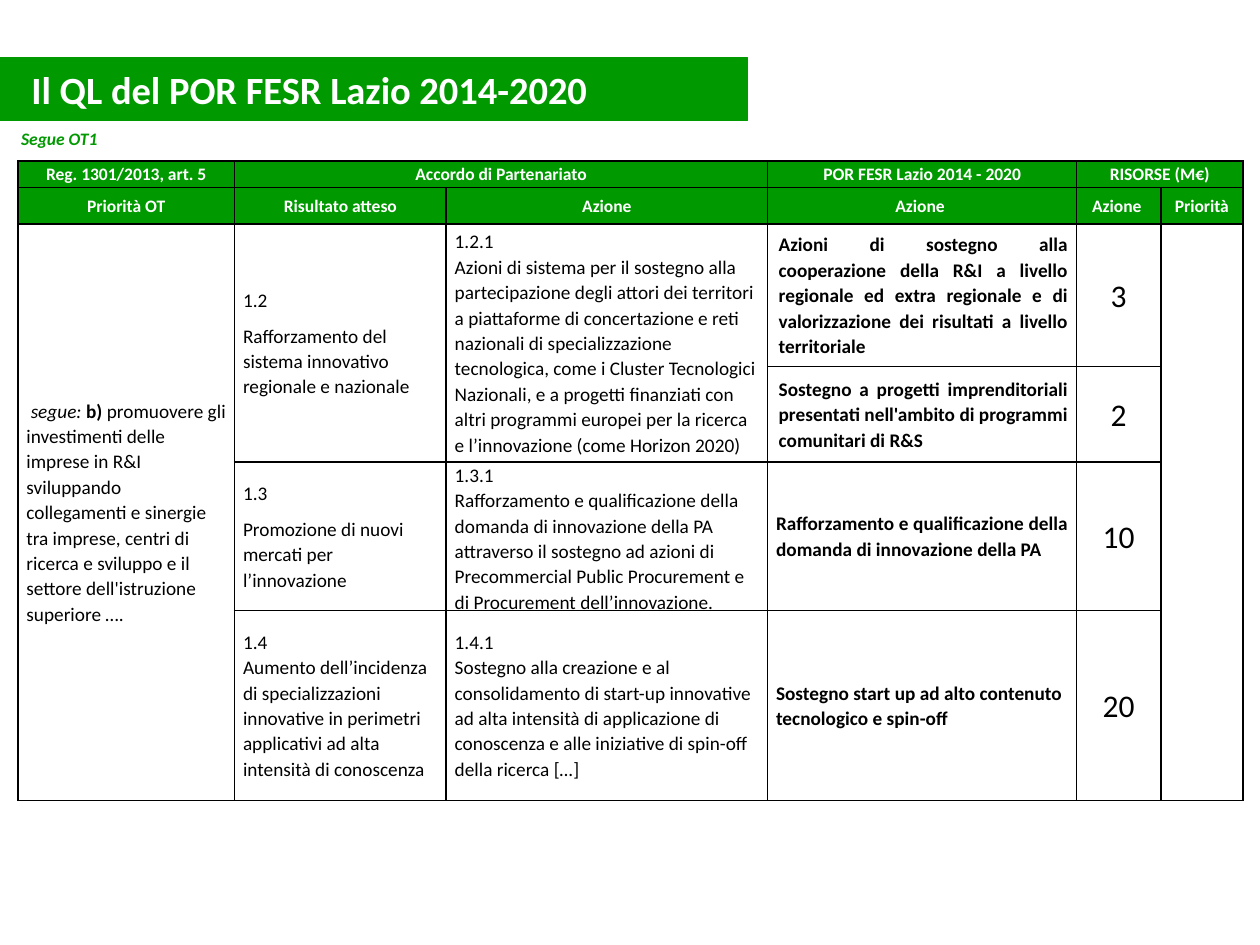
import pptx
import pptx.dml.color
import pptx.enum.shapes
import pptx.enum.text
import pptx.util
import lxml.etree

Pt = pptx.util.Pt
ALIGN = pptx.enum.text.PP_ALIGN
MIDDLE = pptx.enum.text.MSO_ANCHOR.MIDDLE
COLORS = {"green": "009900", "white": "FFFFFF", "black": "000000"}


def add_span(para, text, size, color, style=""):
    """Add one run; style holds "b" for bold and "i" for italic."""
    span = para.add_run()
    span.text = text
    span.font.name = "Calibri"
    span.font.size = Pt(size)
    span.font.bold = "b" in style
    span.font.italic = "i" in style
    span.font.color.rgb = pptx.dml.color.RGBColor.from_string(COLORS[color])


def add_borders(cell):
    """Draw a thin black line on every side of a cell, below its fill in the schema order."""
    properties = cell._tc.get_or_add_tcPr()
    space = "http://schemas.openxmlformats.org/drawingml/2006/main"
    for place, side in enumerate(("lnL", "lnR", "lnT", "lnB")):
        line = lxml.etree.Element(f"{{{space}}}{side}", w=str(Pt(1)))
        fill = lxml.etree.SubElement(line, f"{{{space}}}solidFill")
        lxml.etree.SubElement(fill, f"{{{space}}}srgbClr", val=COLORS["black"])
        properties.insert(place, line)


deck = pptx.Presentation()
deck.slide_width, deck.slide_height = Pt(720), Pt(540)
page = deck.slides.add_slide(deck.slide_layouts[6])

# Subtitle
box = page.shapes.add_textbox(Pt(5), Pt(54.7), Pt(452), Pt(49))
box.text_frame.word_wrap = True
box.text_frame.vertical_anchor = MIDDLE
add_span(box.text_frame.paragraphs[0], "Segue OT1", 10, "green", "bi")

# Table grid
widths = [123.8, 121, 183.6, 176.6, 48.2, 46.8]
heights = [15.1, 20.9, 81.4, 54.7, 81.4, 108.7]
table = page.shapes.add_table(
    len(heights), len(widths), Pt(10.2), Pt(92), Pt(sum(widths)), Pt(sum(heights))
).table
for column, width in zip(table.columns, widths):
    column.width = Pt(width)
for row, height in zip(table.rows, heights):
    row.height = Pt(height)

for row_index, row in enumerate(table.rows):
    for cell in row.cells:
        cell.margin_left = cell.margin_right = Pt(4.9)
        cell.margin_top = cell.margin_bottom = 0
        cell.vertical_anchor = MIDDLE
        cell.fill.solid()
        shade = COLORS["green" if row_index < 2 else "white"]
        cell.fill.fore_color.rgb = pptx.dml.color.RGBColor.from_string(shade)
        add_borders(cell)

# Merged cells: first row, first column, last row, last column
for top, left, bottom, right in [
    (0, 1, 0, 2), (0, 4, 0, 5), (2, 0, 5, 0), (2, 1, 3, 1), (2, 2, 3, 2), (2, 5, 5, 5),
]:
    table.cell(top, left).merge(table.cell(bottom, right))

# Header cells
headers = {
    (0, 0): "Reg. 1301/2013, art. 5",
    (0, 1): "Accordo di Partenariato",
    (0, 3): "POR FESR Lazio 2014 - 2020",
    (0, 4): "RISORSE (M€)",
    (1, 0): "Priorità OT",
    (1, 1): "Risultato atteso",
    (1, 2): "Azione",
    (1, 3): "Azione ",
    (1, 4): "Azione ",
    (1, 5): "Priorità",
}
# Each entry: row, column, alignment, size, colour, paragraphs of (text, style) runs
entries = [
    (row, column, ALIGN.CENTER, 10, "white", [[(text, "b")]])
    for (row, column), text in headers.items()
]

# Priority
entries.append((2, 0, ALIGN.LEFT, 11, "black", [[
    (" ", "b"),
    ("segue: ", "i"),
    ("b)", "b"),
    (" promuovere gli investimenti delle imprese in R&I sviluppando collegamenti e sinergie "
     "tra imprese, centri di ricerca e sviluppo e il settore dell'istruzione superiore ….", ""),
]]))

# Expected results and partnership actions: a code, then its description
numbered = [
    (2, 1, "1.2", [("Rafforzamento del sistema innovativo regionale e nazionale", "")]),
    (2, 2, "1.2.1", [(
        "Azioni di sistema per il sostegno alla partecipazione degli attori dei territori a "
        "piattaforme di concertazione e reti nazionali di specializzazione tecnologica, come i "
        "Cluster Tecnologici Nazionali, e a progetti finanziati con altri programmi europei per "
        "la ricerca e l’innovazione (come Horizon 2020)", "")]),
    (4, 1, "1.3", [("Promozione di nuovi mercati per l’innovazione", "")]),
    (4, 2, "1.3.1", [(
        "Rafforzamento e qualificazione della domanda di innovazione della PA attraverso il "
        "sostegno ad azioni di Precommercial Public Procurement e di Procurement "
        "dell’innovazione.", "")]),
    (5, 1, "1.4", [(
        "Aumento dell’incidenza di specializzazioni innovative in perimetri applicativi ad alta "
        "intensità di conoscenza", "")]),
    (5, 2, "1.4.1", [
        ("Sostegno alla creazione e al consolidamento di start-up innovative ad alta intensità "
         "di applicazione di conoscenza e alle iniziative di spin-off della ricerca [", ""),
        ("…", "i"),
        ("]", "")]),
]
for row, column, code, description in numbered:
    entries.append((row, column, ALIGN.LEFT, 11, "black", [[(code, "")], description]))

# Regional actions and their resources
actions = [
    (2, ALIGN.JUSTIFY, "3",
     "Azioni di sostegno alla cooperazione della R&I a livello regionale ed extra regionale e "
     "di valorizzazione dei risultati a livello territoriale"),
    (3, ALIGN.JUSTIFY, "2",
     "Sostegno a progetti imprenditoriali presentati nell'ambito di programmi comunitari di R&S"),
    (4, ALIGN.JUSTIFY, "10",
     "Rafforzamento e qualificazione della domanda di innovazione della PA "),
    (5, ALIGN.LEFT, "20",
     "Sostegno start up ad alto contenuto tecnologico e spin-off"),
]
for row, alignment, amount, action in actions:
    entries.append((row, 3, alignment, 11, "black", [[(action, "b")]]))
    entries.append((row, 4, ALIGN.CENTER, 18, "black", [[(amount, "")]]))

# Fill the cells
for row, column, alignment, size, color, paragraphs in entries:
    frame = table.cell(row, column).text_frame
    for index, spans in enumerate(paragraphs):
        para = frame.add_paragraph() if index else frame.paragraphs[0]
        para.alignment = alignment
        para.line_spacing = 1.07
        for text, style in spans:
            add_span(para, text, size, color, style)

# Gap below two of the codes, slight indent of two actions
for row in (2, 4):
    table.cell(row, 1).text_frame.paragraphs[0].space_after = Pt(6)
for row in (2, 3):
    table.cell(row, 3).margin_left = Pt(6.4)

# Title band
band = page.shapes.add_shape(
    pptx.enum.shapes.MSO_SHAPE.RECTANGLE, 0, Pt(33), Pt(427), Pt(36)
)
band.shadow.inherit = False
band.fill.solid()
green = pptx.dml.color.RGBColor.from_string(COLORS["green"])
band.fill.fore_color.rgb = band.line.color.rgb = green
band.line.width = Pt(0.75)
frame = band.text_frame
frame.word_wrap = True
frame.margin_left = Pt(18)
frame.vertical_anchor = MIDDLE
frame.paragraphs[0].alignment = ALIGN.LEFT
add_span(frame.paragraphs[0], "Il QL del POR FESR Lazio 2014-2020", 22, "white", "b")

deck.save("out.pptx")
